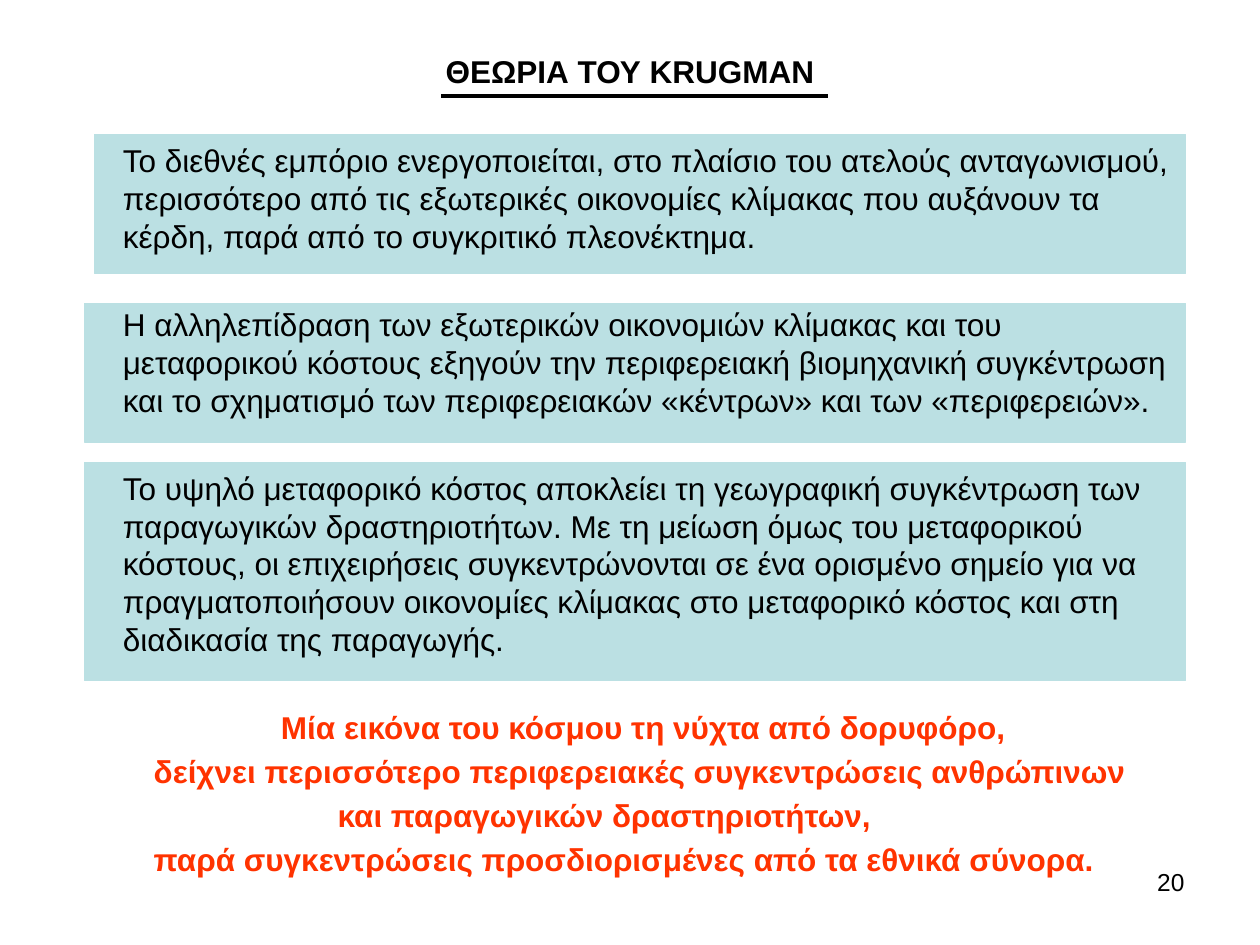
from dataclasses import dataclass

from lxml.etree import SubElement
from pptx import Presentation
from pptx.dml.color import RGBColor
from pptx.enum.shapes import MSO_CONNECTOR, MSO_SHAPE
from pptx.enum.text import MSO_ANCHOR, MSO_AUTO_SIZE, PP_ALIGN
from pptx.oxml.ns import qn
from pptx.util import Inches, Length, Pt

COLORS = {"text": "000000", "panel": "BBE0E3", "accent": "FF3300"}
FONT = "Arial"
COLUMNS, ROWS = 100, 75  # grid over the whole slide
SLIDE_WIDTH, SLIDE_HEIGHT = Inches(10), Inches(7.5)
LINE_GAP, BLOCK_GAP = 3.6, 28.8  # points before a line and before a block


@dataclass(frozen=True)
class Box:
    """A rectangle in grid columns and rows."""
    left: float
    top: float
    width: float
    height: float


@dataclass(frozen=True)
class Line:
    """A line of the conclusion, indented by a number of columns."""
    text: str
    indent: float
    gap: float = LINE_GAP


TITLE_BOX = Box(5, 3.6, 90, 5)
BODY_BOX = Box(5, 10.7, 90, 61.4)
NUMBER_BOX = Box(71.7, 68.3, 23.3, 5.2)
PANELS = [
    Box(7.5, 10.7, 86.6, 11),
    Box(6.7, 24.1, 87.4, 11),
    Box(6.7, 36.7, 87.4, 17.3),
]
STATEMENT_INDENT = 3.75
STATEMENTS = [
    "Το διεθνές εμπόριο ενεργοποιείται, στο πλαίσιο του ατελούς ανταγωνισμού, "
    "περισσότερο από τις εξωτερικές οικονομίες κλίμακας που αυξάνουν τα κέρδη, "
    "παρά από το συγκριτικό πλεονέκτημα.",
    "Η αλληλεπίδραση των εξωτερικών οικονομιών κλίμακας και του μεταφορικού "
    "κόστους εξηγούν την περιφερειακή βιομηχανική συγκέντρωση και το σχηματισμό "
    "των περιφερειακών «κέντρων» και των «περιφερειών».",
    "Το υψηλό μεταφορικό κόστος αποκλείει τη γεωγραφική συγκέντρωση των "
    "παραγωγικών δραστηριοτήτων. Με τη μείωση όμως του μεταφορικού κόστους, οι "
    "επιχειρήσεις συγκεντρώνονται σε ένα ορισμένο σημείο για να πραγματοποιήσουν "
    "οικονομίες κλίμακας στο μεταφορικό κόστος και στη διαδικασία της παραγωγής.",
]
CONCLUSION = [
    Line("Μία εικόνα του κόσμου τη νύχτα από δορυφόρο,", 16.3, BLOCK_GAP),
    Line("δείχνει περισσότερο περιφερειακές συγκεντρώσεις ανθρώπινων", 6.2),
    Line("και παραγωγικών δραστηριοτήτων,", 20.8),
    Line("παρά συγκεντρώσεις προσδιορισμένες από τα εθνικά σύνορα.", 6.2),
]


def across(columns: float) -> Length:
    return Length(round(SLIDE_WIDTH * columns / COLUMNS))


def down(rows: float) -> Length:
    return Length(round(SLIDE_HEIGHT * rows / ROWS))


def place(box: Box) -> tuple[Length, Length, Length, Length]:
    return across(box.left), down(box.top), across(box.width), down(box.height)


def color(name: str) -> RGBColor:
    return RGBColor.from_string(COLORS[name])


def write(paragraph, text: str, *, size: float = 18, bold: bool = False,
          color_name: str = "text", align=PP_ALIGN.LEFT,
          gap: float = 0, indent: float = 0) -> None:
    """Fill a paragraph with one formatted run and no bullet."""
    paragraph.alignment = align
    paragraph.space_before = Pt(gap)
    properties = paragraph._p.get_or_add_pPr()
    properties.set("marL", str(across(indent)))
    properties.set("indent", "0")
    SubElement(properties, qn("a:buNone"))
    run = paragraph.add_run()
    run.text = text
    run.font.name = FONT
    run.font.size = Pt(size)
    run.font.bold = bold
    run.font.color.rgb = color(color_name)


def prepare(shape, box: Box):
    """Place a text shape in front and return its text frame."""
    shape.left, shape.top, shape.width, shape.height = place(box)
    shape.element.getparent().append(shape.element)
    frame = shape.text_frame
    frame.word_wrap = True
    frame.auto_size = MSO_AUTO_SIZE.NONE
    frame.vertical_anchor = MSO_ANCHOR.TOP
    return frame


def draw_panel(slide, box: Box) -> None:
    panel = slide.shapes.add_shape(MSO_SHAPE.RECTANGLE, *place(box))
    panel.shadow.inherit = False
    panel.fill.solid()
    panel.fill.fore_color.rgb = color("panel")
    panel.line.color.rgb = color("panel")
    panel.line.width = Pt(0.75)


def draw_rule(slide, left: float, right: float, row: float) -> None:
    rule = slide.shapes.add_connector(
        MSO_CONNECTOR.STRAIGHT, across(left), down(row), across(right), down(row))
    rule.line.color.rgb = color("text")
    rule.line.width = Pt(2.25)
    SubElement(rule.element.spPr, qn("a:effectLst"))


def main() -> None:
    presentation = Presentation()
    presentation.slide_width, presentation.slide_height = SLIDE_WIDTH, SLIDE_HEIGHT
    slide = presentation.slides.add_slide(presentation.slide_layouts[1])

    # Panels behind the statements
    for box in PANELS:
        draw_panel(slide, box)

    # Underlined title
    title = prepare(slide.shapes.title, TITLE_BOX)
    write(title.paragraphs[0], "ΘΕΩΡΙΑ ΤΟΥ KRUGMAN", bold=True,
          align=PP_ALIGN.CENTER, gap=LINE_GAP)
    draw_rule(slide, 35, 65.7, 7.6)

    # Statements, then the conclusion
    body = prepare(slide.placeholders[1], BODY_BOX)
    for index, statement in enumerate(STATEMENTS):
        paragraph = body.add_paragraph() if index else body.paragraphs[0]
        write(paragraph, statement, indent=STATEMENT_INDENT,
              gap=BLOCK_GAP if index else LINE_GAP)
    for line in CONCLUSION:
        write(body.add_paragraph(), line.text, bold=True, color_name="accent",
              indent=line.indent, gap=line.gap)

    # Slide number
    number = prepare(slide.shapes.add_textbox(*place(NUMBER_BOX)), NUMBER_BOX)
    write(number.paragraphs[0], "20", size=14, align=PP_ALIGN.RIGHT)

    presentation.save("out.pptx")


if __name__ == "__main__":
    main()
